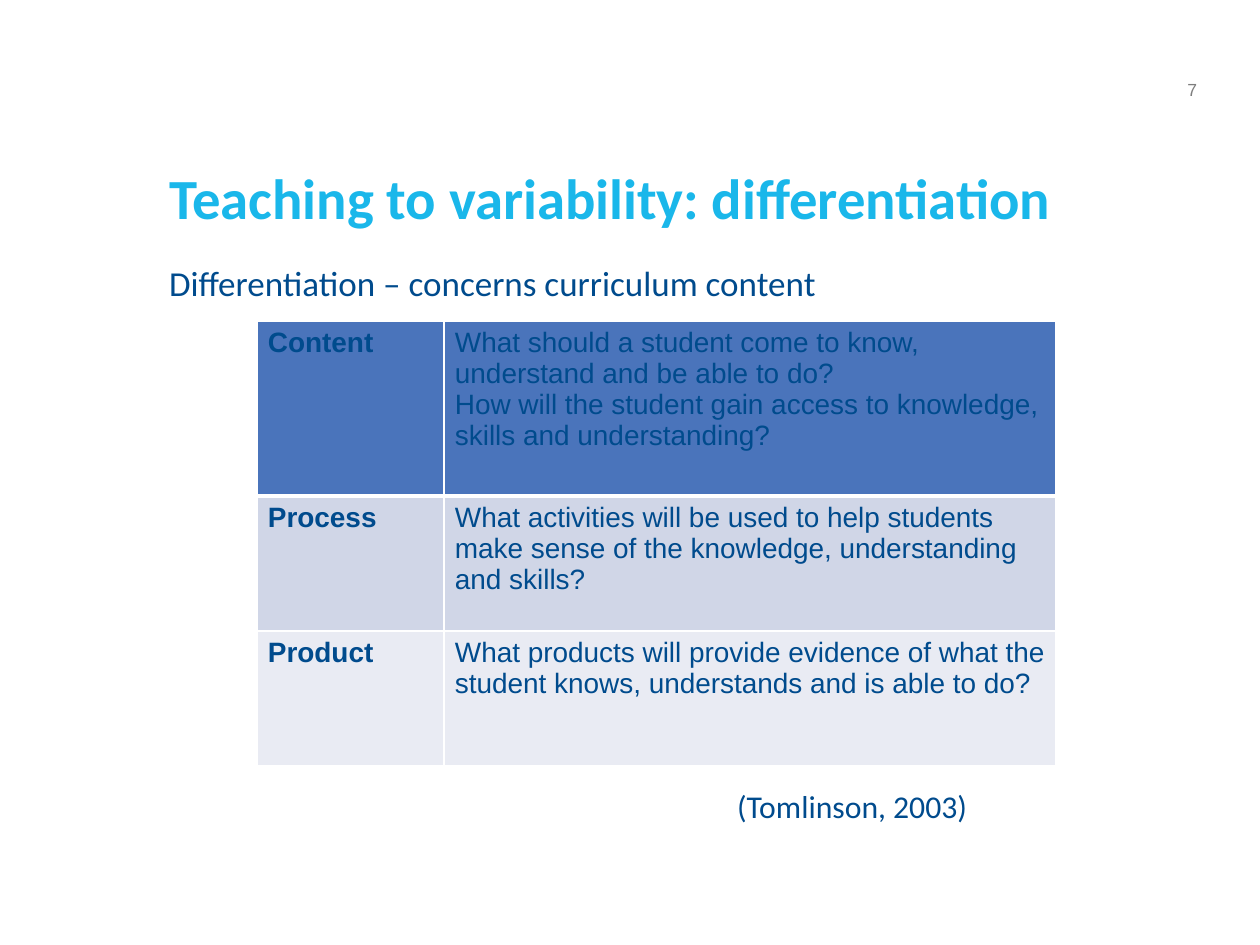
import pptx
import pptx.util
import pptx.dml.color
import pptx.enum.text
import pptx.oxml
import pptx.oxml.ns

PX = 914400 / 126
COLORS = {
    "title": "1AB7EA", "text": "004B8D", "number": "7E7E7E", "border": "FFFFFF",
    "header": "4A74BB", "band": "D0D6E7", "light": "E9EBF3",
}
ROWS = [
    ("Content", ["What should a student come to know, understand and be able to do?",
                 "How will the student gain access to knowledge, skills and understanding?"],
     175, "header"),
    ("Process", ["What activities will be used to help students make sense of the "
                 "knowledge, understanding and skills?"], 135, "band"),
    ("Product", ["What products will provide evidence of what the student knows, "
                 "understands and is able to do?"], 135, "light"),
]


def px(length):
    return pptx.util.Emu(round(length * PX))


def write(paragraph, text, size, font, color, bold=False):
    run = paragraph.add_run()
    run.text = text
    run.font.size = pptx.util.Pt(size)
    run.font.name = font
    run.font.bold = bold
    run.font.color.rgb = pptx.dml.color.RGBColor.from_string(COLORS[color])


presentation = pptx.Presentation()
presentation.slide_width, presentation.slide_height = px(1260), px(945)
slide = presentation.slides.add_slide(presentation.slide_layouts[5])

left, right = pptx.enum.text.PP_ALIGN.LEFT, pptx.enum.text.PP_ALIGN.RIGHT
LINES = [
    (slide.shapes.title, (169, 170, 1028, 134),
     "Teaching to variability: differentiation", 32.4, "Calibri", "title", True, left, 0.9),
    (None, (169, 266, 1028, 40),
     "Differentiation – concerns curriculum content", 20, "Calibri", "text", False, left, 0.9),
    (None, (737, 791, 460, 40),
     "(Tomlinson, 2003)", 18.1, "Calibri", "text", False, left, 0.9),
    (None, (1142, 79, 55, 32), "7", 10, "Arial", "number", False, right, 1.0),
]
for holder, place, text, size, font, color, bold, align, spacing in LINES:
    box = holder or slide.shapes.add_textbox(0, 0, 0, 0)
    box.left, box.top, box.width, box.height = map(px, place)
    frame = box.text_frame
    frame.word_wrap = True
    frame.auto_size = pptx.enum.text.MSO_AUTO_SIZE.NONE
    frame.vertical_anchor = pptx.enum.text.MSO_ANCHOR.TOP
    frame.margin_left = frame.margin_right = frame.margin_top = frame.margin_bottom = 0
    paragraph = frame.paragraphs[0]
    paragraph.alignment = align
    paragraph.line_spacing = spacing
    write(paragraph, text, size, font, color, bold)

table = slide.shapes.add_table(3, 2, px(257), px(321), px(799), px(445)).table
table.columns[0].width, table.columns[1].width = px(187), px(612)
for r, (aspect, questions, height, fill) in enumerate(ROWS):
    table.rows[r].height = px(height)
    for c, texts in enumerate([[aspect], questions]):
        cell = table.cell(r, c)
        cell.margin_left = cell.margin_right = px(11)
        cell.margin_top = cell.margin_bottom = px(6)
        properties = cell._tc.get_or_add_tcPr()
        for side in "LRTB":
            thick = (side == "B" and r == 0) or (side == "T" and r == 1)
            properties.append(pptx.oxml.parse_xml(
                f'<a:ln{side} {pptx.oxml.ns.nsdecls("a")} w="{38100 if thick else 12700}">'
                f'<a:solidFill><a:srgbClr val="{COLORS["border"]}"/></a:solidFill></a:ln{side}>'))
        cell.fill.solid()
        cell.fill.fore_color.rgb = pptx.dml.color.RGBColor.from_string(COLORS[fill])
        for i, text in enumerate(texts):
            frame = cell.text_frame
            paragraph = frame.add_paragraph() if i else frame.paragraphs[0]
            write(paragraph, text, 16, "Arial", "text", c == 0)

presentation.save("out.pptx")
